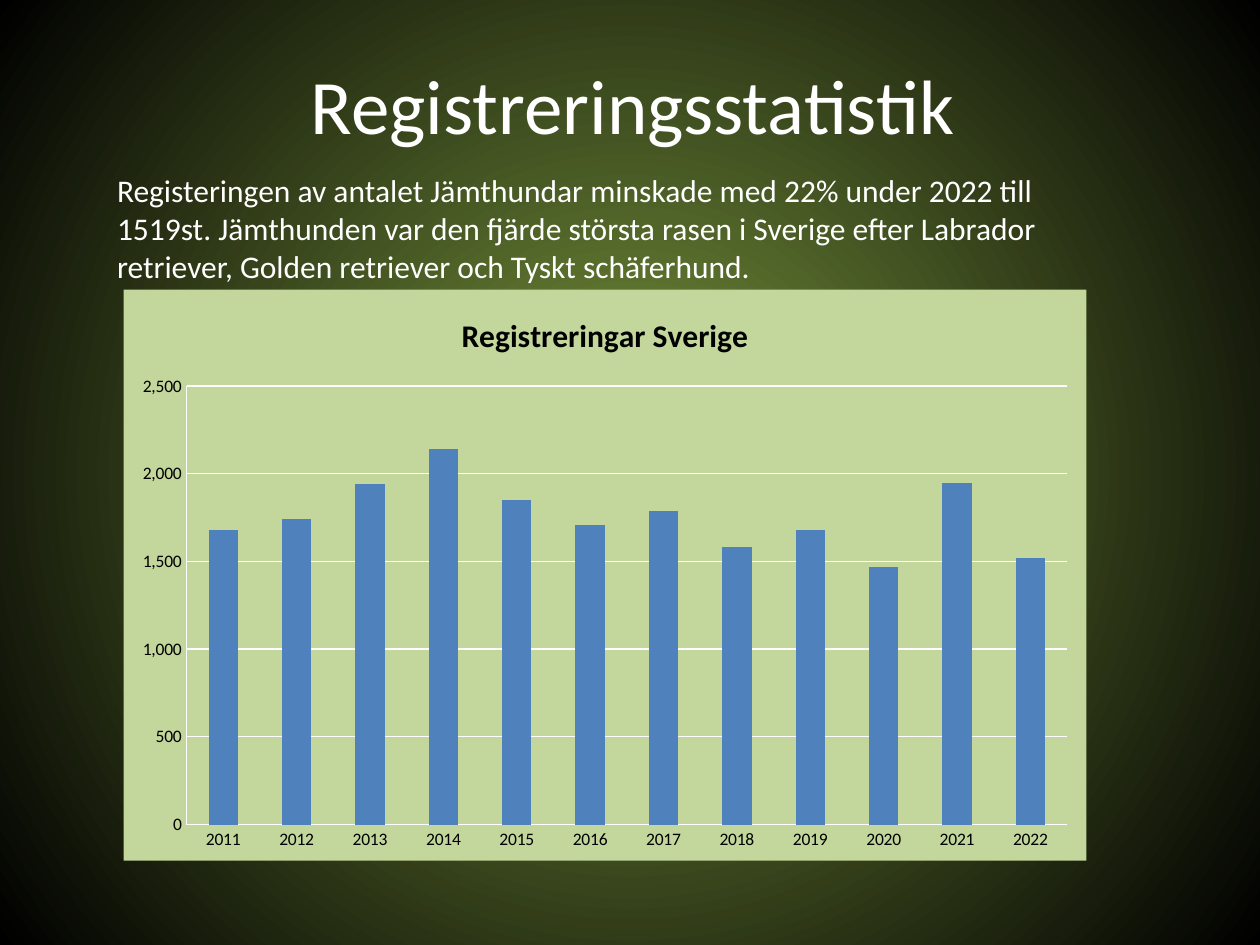
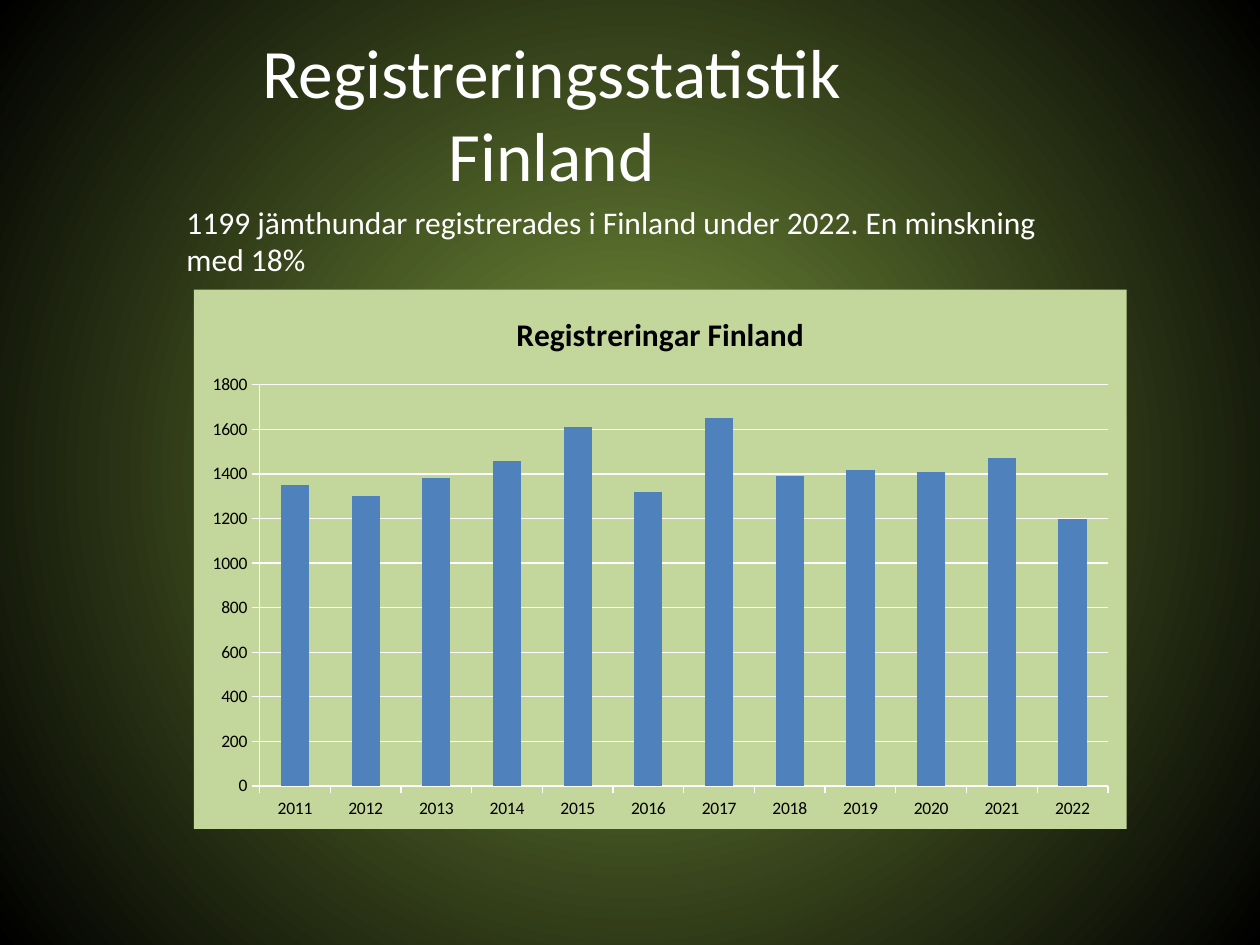
from lxml import etree
from pptx import Presentation
from pptx import util as u
from pptx.chart import data as cd
from pptx.dml.color import RGBColor
from pptx.enum import chart as ch, text
from pptx.oxml.ns import qn

COLORS = {"glow": "77933C", "edge": "000000", "text": "FFFFFF", "label": "000000",
          "panel": "C3D69B", "bar": "4F81BD", "grid": "FFFFFF"}
FONT = "Calibri"
YEARS = [str(y) for y in range(2011, 2023)]

SLIDES = [
    {"title": "Registreringsstatistik",
     "title_box": (4.29, 0.05, 16.94, 4.09), "title_size": 44, "title_inset": 0.13,
     "body": "Registeringen av antalet Jämthundar minskade med 22% under 2022 till 1519st. "
             "Jämthunden var den fjärde största rasen i Sverige efter Labrador retriever, "
             "Golden retriever och Tyskt schäferhund.",
     "body_box": (2.11, 3.33, 20.19, 2.57),
     "chart_title": "Registreringar Sverige", "chart_box": (2.49, 5.84, 19.41, 11.51),
     "values": [1680, 1740, 1940, 2140, 1850, 1710, 1790, 1580, 1680, 1470, 1950, 1520],
     "top": 2500, "step": 500, "format": "#,##0", "tick": ch.XL_TICK_MARK.NONE},
    {"title": "Registreringsstatistik Finland",
     "title_box": (2.97, 1.45, 16.31, 3.1), "title_size": 39.6, "title_inset": 1.6,
     "body": "1199 jämthundar registrerades i Finland under 2022. En minskning med 18%",
     "body_box": (3.51, 3.96, 18.14, 1.8),
     "chart_title": "Registreringar Finland", "chart_box": (3.91, 5.84, 18.8, 10.87),
     "values": [1350, 1300, 1380, 1460, 1610, 1320, 1650, 1390, 1420, 1410, 1470, 1200],
     "top": 1800, "step": 200, "format": "General", "tick": ch.XL_TICK_MARK.OUTSIDE},
]


def rgb(name):
    """Return a named colour."""
    return RGBColor.from_string(COLORS[name])


def set_all(obj, **values):
    """Set several attributes of an object."""
    for key, value in values.items():
        setattr(obj, key, value)


def set_font(font, size, color, bold=False):
    """Format a font."""
    set_all(font, name=FONT, size=u.Pt(size), bold=bold)
    font.color.rgb = rgb(color)


def cm_box(box):
    """Convert a box in centimetres to lengths."""
    return [u.Cm(v) for v in box]


def paint_background(master):
    """Give the master a round gradient that fades from the centre."""
    fill = master.background.fill
    fill.gradient()
    for stop, name, pos in zip(fill.gradient_stops, ("glow", "edge"), (0, 1)):
        stop.color.rgb = rgb(name)
        stop.position = pos
    grad = master.element.find(".//" + qn("a:gradFill"))
    grad.remove(grad.find(qn("a:lin")))
    circle = etree.SubElement(grad, qn("a:path"), {"path": "circle"})
    etree.SubElement(circle, qn("a:fillToRect"), dict.fromkeys("ltrb", "50000"))


def add_title(slide, box, words, size, inset):
    """Place and format the title placeholder."""
    sp = slide.shapes.title
    set_all(sp, **dict(zip(("left", "top", "width", "height"), cm_box(box))))
    tf = sp.text_frame
    tf.text = words
    set_all(tf, word_wrap=True, auto_size=text.MSO_AUTO_SIZE.NONE,
            vertical_anchor=text.MSO_ANCHOR.MIDDLE, margin_bottom=u.Cm(inset))
    p = tf.paragraphs[0]
    p.alignment = text.PP_ALIGN.CENTER
    set_font(p.runs[0].font, size, "text")


def add_body(slide, box, words):
    """Add the explaining paragraph."""
    tf = slide.shapes.add_textbox(*cm_box(box)).text_frame
    tf.text = words
    set_all(tf, word_wrap=True, auto_size=text.MSO_AUTO_SIZE.SHAPE_TO_FIT_TEXT)
    set_font(tf.paragraphs[0].runs[0].font, 18, "text")


def format_line(line):
    """Draw a thin chart line."""
    line.color.rgb = rgb("grid")
    line.width = u.Pt(0.75)


def fill_panel(chart):
    """Fill the chart area."""
    area = etree.Element(qn("c:spPr"))
    solid = etree.SubElement(area, qn("a:solidFill"))
    etree.SubElement(solid, qn("a:srgbClr"), {"val": COLORS["panel"]})
    line = etree.SubElement(area, qn("a:ln"))
    etree.SubElement(line, qn("a:noFill"))
    chart.element.find(qn("c:chart")).addnext(area)


def add_column_chart(slide, box, item):
    """Add the column chart of registrations per year."""
    data = cd.CategoryChartData(number_format=item["format"])
    data.categories = YEARS
    data.add_series("Series 1", item["values"])
    chart = slide.shapes.add_chart(ch.XL_CHART_TYPE.COLUMN_CLUSTERED, *cm_box(box), data).chart
    set_font(chart.font, 10, "label")
    chart.has_legend = False
    tf = chart.chart_title.text_frame
    tf.text = item["chart_title"]
    set_font(tf.paragraphs[0].runs[0].font, 18, "label", bold=True)
    chart.chart_title.include_in_layout = False
    fill_panel(chart)

    plot = chart.plots[0]
    set_all(plot, gap_width=150, vary_by_categories=False)
    bars = plot.series[0].format.fill
    bars.solid()
    bars.fore_color.rgb = rgb("bar")

    for axis in (chart.category_axis, chart.value_axis):
        set_all(axis, major_tick_mark=item["tick"], minor_tick_mark=ch.XL_TICK_MARK.NONE)
        set_font(axis.tick_labels.font, 10, "label")
        format_line(axis.format.line)
    axis = chart.value_axis
    set_all(axis, minimum_scale=0, maximum_scale=item["top"], major_unit=item["step"],
            has_major_gridlines=True)
    set_all(axis.tick_labels, number_format=item["format"], number_format_is_linked=False)
    format_line(axis.major_gridlines.format.line)


def add_statistics_slide(prs, item):
    """Add a slide with title, paragraph and chart."""
    slide = prs.slides.add_slide(prs.slide_layouts[5])
    add_title(slide, item["title_box"], item["title"], item["title_size"], item["title_inset"])
    add_body(slide, item["body_box"], item["body"])
    add_column_chart(slide, item["chart_box"], item)


def main():
    """Build and save the presentation."""
    prs = Presentation()
    set_all(prs, slide_width=u.Cm(25.4), slide_height=u.Cm(19.05))
    paint_background(prs.slide_master)
    for item in SLIDES:
        add_statistics_slide(prs, item)
    prs.save("out.pptx")


if __name__ == "__main__":
    main()
